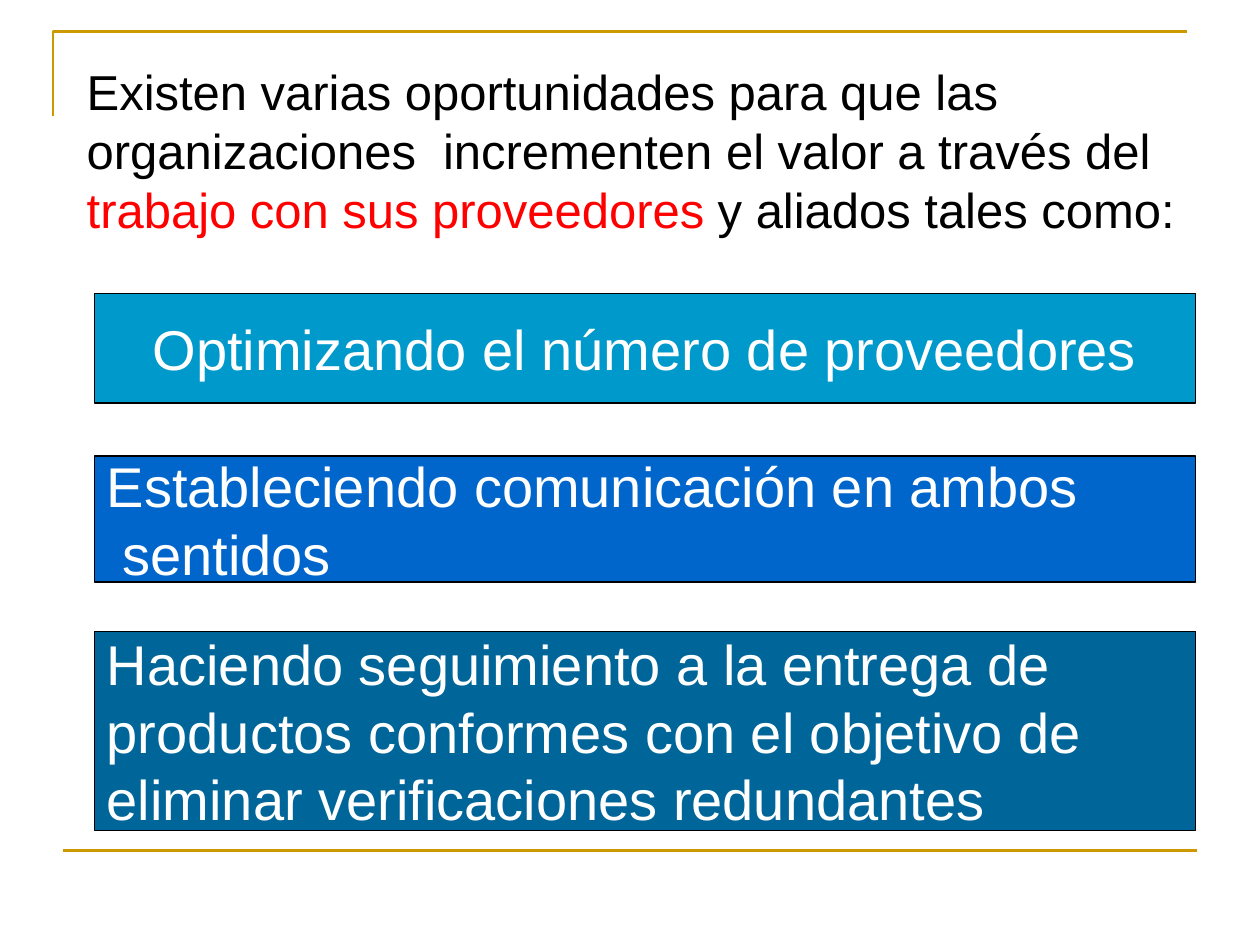
from dataclasses import dataclass

from pptx import Presentation
from pptx.dml.color import RGBColor as RGB
from pptx.enum.shapes import MSO_CONNECTOR as Connector, MSO_SHAPE as Shape
from pptx.enum.text import MSO_ANCHOR as Anchor, PP_ALIGN as Align
from pptx.oxml.ns import qn
from pptx.util import Inches, Pt
from lxml import etree


@dataclass(frozen=True)
class Theme:
    font: str = "Arial"
    intro_size: int = 28
    bar_size: int = 32
    rule_width: float = 1.5
    border_width: float = 0.75
    gold: str = "CC9900"
    black: str = "000000"
    white: str = "FFFFFF"
    red: str = "FF0000"
    cyan: str = "0099CC"
    blue: str = "0066CC"
    teal: str = "006699"


THEME = Theme()
BAR_LEFT, BAR_WIDTH = 0.75, 8.74

INTRO = [
    ("Existen varias oportunidades para que las organizaciones  "
     "incrementen el valor a través del ", THEME.black),
    ("trabajo con sus proveedores", THEME.red),
    (" y aliados tales como:", THEME.black),
]

# Top, height, fill, alignment, lines of text
BARS = [
    (2.33, 0.87, THEME.cyan, Align.CENTER,
     ["Optimizando el número de proveedores"]),
    (3.62, 1, THEME.blue, Align.LEFT,
     ["Estableciendo comunicación en ambos", " sentidos"]),
    (5.01, 1.58, THEME.teal, Align.LEFT,
     ["Haciendo seguimiento a la entrega de",
      "productos conformes con el objetivo de",
      "eliminar verificaciones redundantes"]),
]


def style_span(span, size, color):
    span.font.name = THEME.font
    span.font.size = Pt(size)
    span.font.color.rgb = RGB.from_string(color)


def style_line(line, color, width):
    line.color.rgb = RGB.from_string(color)
    line.width = Pt(width)


def add_corner(page, left, top, right, bottom):
    builder = page.shapes.build_freeform(Inches(left), Inches(bottom))
    builder.add_line_segments(
        [(Inches(left), Inches(top)), (Inches(right), Inches(top))], close=False)
    corner = builder.convert_to_shape()
    corner.shadow.inherit = False
    corner.fill.background()
    style_line(corner.line, THEME.gold, THEME.rule_width)


def add_rule(page, left, right, y):
    rule = page.shapes.add_connector(
        Connector.STRAIGHT, Inches(left), Inches(y), Inches(right), Inches(y))
    style_line(rule.line, THEME.gold, THEME.rule_width)
    etree.SubElement(rule._element.spPr, qn("a:effectLst"))


def add_intro(page, left, top, width, height):
    box = page.shapes.add_textbox(
        Inches(left), Inches(top), Inches(width), Inches(height))
    box.text_frame.word_wrap = True
    para = box.text_frame.paragraphs[0]
    for text, color in INTRO:
        span = para.add_run()
        span.text = text
        style_span(span, THEME.intro_size, color)


def add_bar(page, top, height, fill, align, lines):
    bar = page.shapes.add_shape(
        Shape.RECTANGLE, Inches(BAR_LEFT), Inches(top),
        Inches(BAR_WIDTH), Inches(height))
    bar.shadow.inherit = False
    bar.fill.solid()
    bar.fill.fore_color.rgb = RGB.from_string(fill)
    style_line(bar.line, THEME.black, THEME.border_width)
    frame = bar.text_frame
    frame.word_wrap = True
    frame.vertical_anchor = Anchor.MIDDLE
    frame.text = "\n".join(lines)
    for para in frame.paragraphs:
        para.alignment = align
        for span in para.runs:
            style_span(span, THEME.bar_size, THEME.white)


def main():
    deck = Presentation()
    deck.slide_width, deck.slide_height = Inches(10), Inches(7.5)
    page = deck.slides.add_slide(deck.slide_layouts[6])

    # Gold frame lines
    add_corner(page, 0.42, 0.25, 9.42, 0.92)
    add_rule(page, 0.5, 9.5, 6.75)

    # Introduction and the three opportunities
    add_intro(page, 0.59, 0.44, 9.06, 1.97)
    for bar in BARS:
        add_bar(page, *bar)

    deck.save("out.pptx")


if __name__ == "__main__":
    main()
